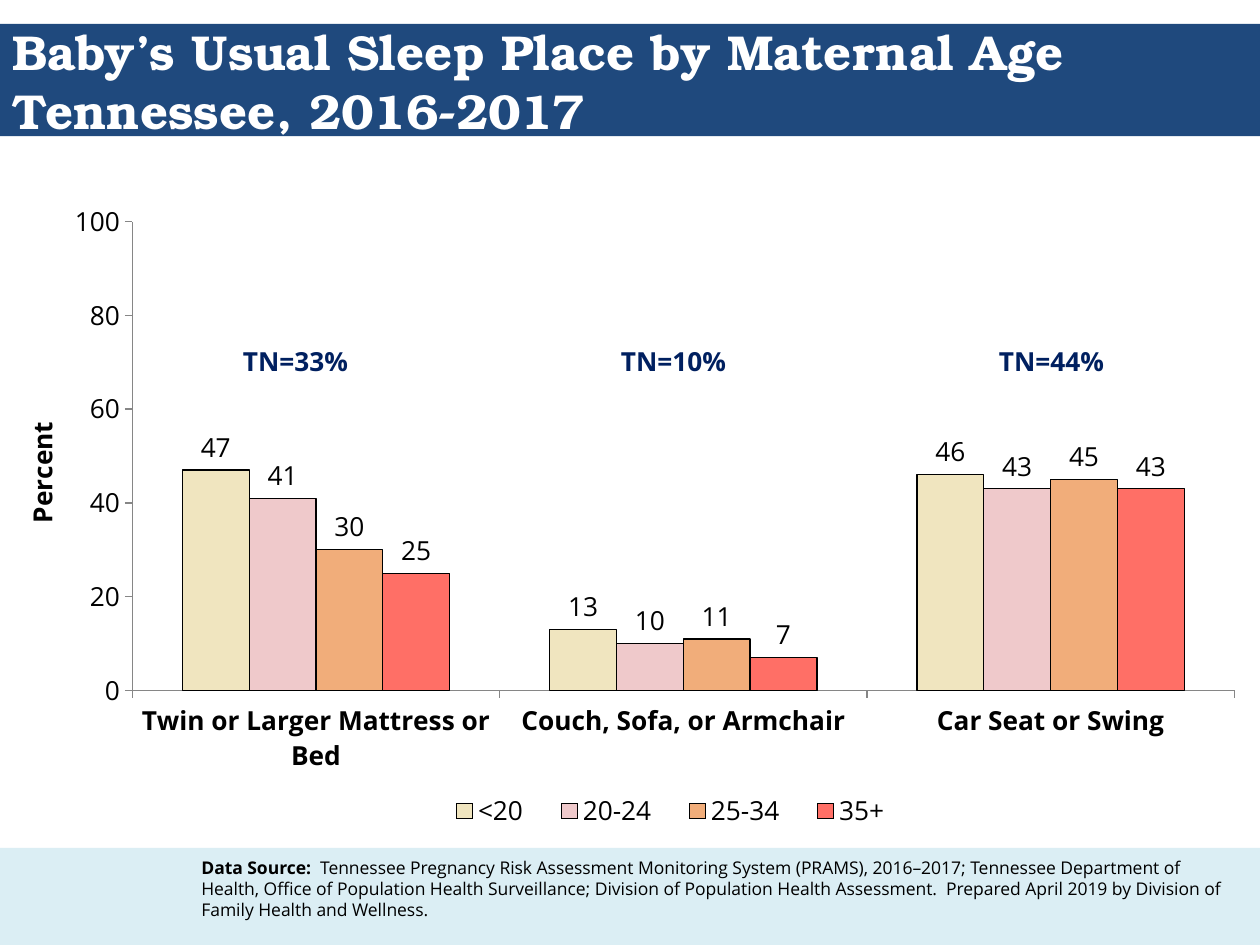
import pptx
import pptx.chart.data
import pptx.dml.color
import pptx.enum.chart
import pptx.enum.shapes
import pptx.enum.text
import pptx.oxml
import pptx.oxml.ns
import pptx.util
from pptx.util import Inches

COLORS = {
    "band": "1F497D", "footer": "DBEEF4", "white": "FFFFFF",
    "black": "000000", "navy": "002060", "axis": "868686",
}
TITLE_FONT = "TeX Gyre Bonum"
BODY_FONT = "Open Sans"
CATEGORIES = ["Twin or Larger Mattress or Bed", "Couch, Sofa, or Armchair", "Car Seat or Swing"]
AGE_GROUPS = [
    ("<20", [47, 13, 46], "F0E5BF"),
    ("20-24", [41, 10, 43], "EFC9CB"),
    ("25-34", [30, 11, 45], "F1AD7A"),
    ("35+", [25, 7, 43], "FF6F66"),
]
STATE_RATES = ["TN=33%", "TN=10%", "TN=44%"]
SOURCE = (
    "Tennessee Pregnancy Risk Assessment Monitoring System (PRAMS), 2016–2017; "
    "Tennessee Department of Health, Office of Population Health Surveillance; "
    "Division of Population Health Assessment.  Prepared April 2019 by Division of "
    "Family Health and Wellness."
)


def rgb(value):
    return pptx.dml.color.RGBColor.from_string(value)


def style_font(font, size, color=COLORS["black"], bold=False, name=BODY_FONT):
    font.name = name
    font.size = pptx.util.Pt(size)
    font.bold = bold
    font.color.rgb = rgb(color)


def add_band(page, left, top, width, height, color):
    band = page.shapes.add_shape(
        pptx.enum.shapes.MSO_SHAPE.RECTANGLE,
        Inches(left), Inches(top), Inches(width), Inches(height))
    band.shadow.inherit = False
    band.fill.solid()
    band.fill.fore_color.rgb = rgb(color)
    band.line.fill.background()
    # Bands lie behind everything else
    page.shapes.element.insert(2, band.element)


def add_text(page, left, top, width, height, parts, size, color):
    box = page.shapes.add_textbox(Inches(left), Inches(top), Inches(width), Inches(height))
    box.text_frame.word_wrap = True
    para = box.text_frame.paragraphs[0]
    for text, bold in parts:
        span = para.add_run()
        span.text = text
        style_font(span.font, size, color, bold)


def add_title(page, left, top, width, height):
    add_band(page, left, top, width, height, COLORS["band"])
    title = page.shapes.title
    title.left, title.top = Inches(left), Inches(top)
    title.width, title.height = Inches(width), Inches(height)
    frame = title.text_frame
    frame.text = "Baby’s Usual Sleep Place by Maternal Age\vTennessee, 2016-2017"
    frame.word_wrap = True
    frame.auto_size = pptx.enum.text.MSO_AUTO_SIZE.NONE
    frame.vertical_anchor = pptx.enum.text.MSO_ANCHOR.MIDDLE
    para = frame.paragraphs[0]
    para.alignment = pptx.enum.text.PP_ALIGN.LEFT
    for span in para.runs:
        style_font(span.font, 28, COLORS["white"], True, TITLE_FONT)


def set_layout(element, index, inner=False, **fractions):
    """Place a chart part by fractions of the chart's size."""
    for old in element.findall(pptx.oxml.ns.qn("c:layout")):
        element.remove(old)
    target = '<c:layoutTarget val="inner"/>' if inner else ""
    modes = "".join(f'<c:{key}Mode val="edge"/>' for key in fractions if key in "xy")
    sizes = "".join(f'<c:{key} val="{value}"/>' for key, value in fractions.items())
    element.insert(index, pptx.oxml.parse_xml(
        f'<c:layout {pptx.oxml.ns.nsdecls("c")}><c:manualLayout>'
        f"{target}{modes}{sizes}</c:manualLayout></c:layout>"))


def style_axes(chart):
    for axis, bold in ((chart.category_axis, True), (chart.value_axis, False)):
        style_font(axis.tick_labels.font, 15, bold=bold)
        axis.has_major_gridlines = False
        axis.major_tick_mark = pptx.enum.chart.XL_TICK_MARK.OUTSIDE
        axis.format.line.color.rgb = rgb(COLORS["axis"])
        axis.format.line.width = pptx.util.Pt(0.75)
    scale = chart.value_axis
    scale.minimum_scale, scale.maximum_scale, scale.major_unit = 0, 100, 20
    scale.tick_labels.number_format = "0"
    scale.tick_labels.number_format_is_linked = False
    frame = scale.axis_title.text_frame
    frame.text = "Percent"
    style_font(frame.paragraphs[0].runs[0].font, 15, bold=True)


def add_sleep_chart(page, left, top, width, height):
    data = pptx.chart.data.CategoryChartData()
    data.categories = CATEGORIES
    for name, values, _ in AGE_GROUPS:
        data.add_series(name, values)
    chart = page.shapes.add_chart(
        pptx.enum.chart.XL_CHART_TYPE.COLUMN_CLUSTERED,
        Inches(left), Inches(top), Inches(width), Inches(height), data).chart
    style_font(chart.font, 10, name="Calibri")
    chart.has_title = False
    style_axes(chart)

    # Columns and their values
    plot = chart.plots[0]
    plot.gap_width, plot.overlap = 150, 0
    plot.vary_by_categories = False
    for series, (_, _, color) in zip(plot.series, AGE_GROUPS):
        series.format.fill.solid()
        series.format.fill.fore_color.rgb = rgb(color)
        series.format.line.color.rgb = rgb(COLORS["black"])
        series.format.line.width = pptx.util.Pt(0.75)
        labels = series.data_labels
        labels.show_value = True
        labels.number_format = "#,##0"
        labels.number_format_is_linked = False
        labels.position = pptx.enum.chart.XL_LABEL_POSITION.OUTSIDE_END
        style_font(labels.font, 15)

    # Legend
    chart.has_legend = True
    legend = chart.legend
    legend.position = pptx.enum.chart.XL_LEGEND_POSITION.BOTTOM
    legend.include_in_layout = False
    style_font(legend.font, 15)

    # Places of the axis title, legend and plot area
    def find_part(tag):
        return chart.element.find(".//" + pptx.oxml.ns.qn(tag))

    set_layout(find_part("c:valAx").find(pptx.oxml.ns.qn("c:title")), 1, x=0.03, y=0.35)
    set_layout(find_part("c:legend"), 1, x=0.35, y=0.92, w=0.38, h=0.07)
    set_layout(find_part("c:plotArea"), 0, inner=True, x=0.12, y=0.05, w=0.86, h=0.72)


def add_state_rates(page, left, top, step):
    for index, rate in enumerate(STATE_RATES):
        add_text(page, left + index * step, top, 1.1, 0.35, [(rate, True)], 15, COLORS["navy"])


def add_footer(page, left, top, width, height):
    add_band(page, left, top, width, height, COLORS["footer"])
    add_text(page, left + 1.5, top + 0.02, 8.33, 0.61,
             [("Data Source:  ", True), (SOURCE, False)], 10, COLORS["black"])


def main():
    deck = pptx.Presentation()
    deck.slide_width, deck.slide_height = Inches(10), Inches(7.5)
    page = deck.slides.add_slide(deck.slide_layouts[5])
    add_title(page, 0, 0.19, 10, 0.89)
    add_sleep_chart(page, -0.17, 1.5, 10.17, 5.17)
    add_state_rates(page, 1.83, 2.69, 3)
    add_footer(page, 0, 6.73, 10, 0.77)
    deck.save("out.pptx")


if __name__ == "__main__":
    main()
